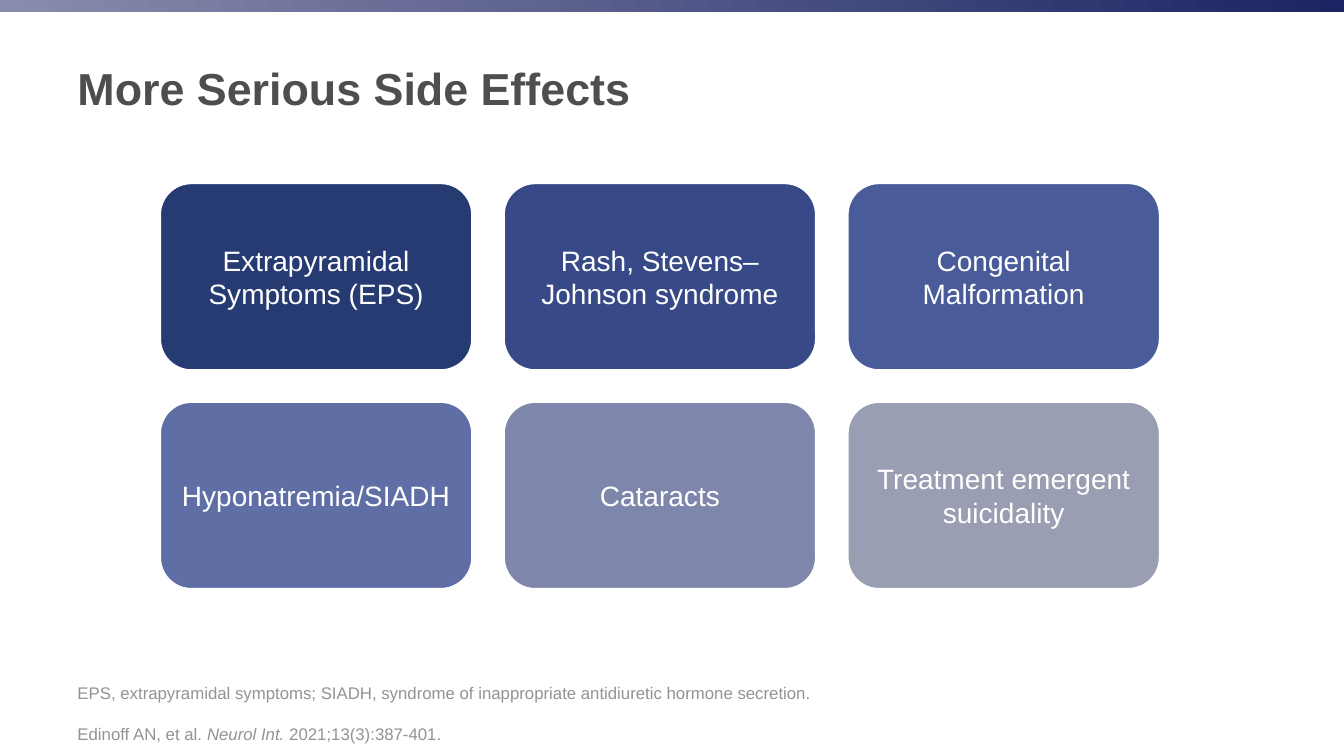
"""Build the slide on more serious side effects."""
from pptx import Presentation
from pptx.dml.color import RGBColor
from pptx.enum.shapes import MSO_SHAPE
from pptx.enum.text import MSO_ANCHOR, PP_ALIGN
from pptx.util import Inches, Pt

RECTANGLE, ROUNDED = MSO_SHAPE.RECTANGLE, MSO_SHAPE.ROUNDED_RECTANGLE
MIDDLE, BOTTOM = MSO_ANCHOR.MIDDLE, MSO_ANCHOR.BOTTOM
LEFT, CENTER = PP_ALIGN.LEFT, PP_ALIGN.CENTER

WHITE = RGBColor(0xFF, 0xFF, 0xFF)
TITLE_GRAY = RGBColor(0x4D, 0x4E, 0x4D)
NOTE_GRAY = RGBColor(0x93, 0x93, 0x93)
BAND_START = RGBColor(0x89, 0x8C, 0xAD)
BAND_END = RGBColor(0x1C, 0x24, 0x63)
FONT = "Arial"

TITLE = "More Serious Side Effects"
SIDE_EFFECTS = [
    ("Extrapyramidal Symptoms (EPS)", RGBColor(0x27, 0x3B, 0x73)),
    ("Rash, Stevens–Johnson syndrome", RGBColor(0x37, 0x4A, 0x87)),
    ("Congenital Malformation", RGBColor(0x49, 0x5B, 0x99)),
    ("Hyponatremia/SIADH", RGBColor(0x60, 0x6E, 0xA6)),
    ("Cataracts", RGBColor(0x7E, 0x87, 0xAB)),
    ("Treatment emergent suicidality", RGBColor(0x9A, 0x9E, 0xB3)),
]
ABBREVIATIONS = ("EPS, extrapyramidal symptoms; SIADH, syndrome of "
                 "inappropriate antidiuretic hormone secretion.")
CITATION = [("Edinoff AN, et al. ", False), ("Neurol Int. ", True),
            ("2021;13(3):387-401.", False)]

COLUMNS = 3
GRID_LEFT, GRID_TOP = 1.59, 1.82
CARD_WIDTH, CARD_HEIGHT = 3.09, 1.85
GAP = 0.32
CARD_INSET = 0.08


def style_text(shape, size, color, anchor, align=LEFT, bold=False):
    frame = shape.text_frame
    frame.word_wrap = True
    frame.vertical_anchor = anchor
    for paragraph in frame.paragraphs:
        paragraph.alignment = align
        for run in paragraph.runs:
            run.font.name = FONT
            run.font.size = Pt(size)
            run.font.bold = bold
            run.font.color.rgb = color


def add_band(slide):
    band = slide.shapes.add_shape(RECTANGLE, 0, 0, Inches(13.33), Inches(0.12))
    band.shadow.inherit = False
    band.line.fill.background()
    band.fill.gradient()
    band.fill.gradient_angle = 0
    for stop, color, position in zip(band.fill.gradient_stops,
                                     (BAND_START, BAND_END), (0, 1)):
        stop.color.rgb = color
        stop.position = position


def add_title(slide):
    title = slide.shapes.add_textbox(Inches(0.67), Inches(0.22),
                                     Inches(11.75), Inches(1.3))
    title.text_frame.text = TITLE
    style_text(title, 32, TITLE_GRAY, MIDDLE, bold=True)


def add_card(slide, index, label, color):
    row, column = divmod(index, COLUMNS)
    card = slide.shapes.add_shape(
        ROUNDED,
        Inches(GRID_LEFT + column * (CARD_WIDTH + GAP)),
        Inches(GRID_TOP + row * (CARD_HEIGHT + GAP)),
        Inches(CARD_WIDTH), Inches(CARD_HEIGHT))
    card.shadow.inherit = False
    card.fill.solid()
    card.fill.fore_color.rgb = color
    card.line.color.rgb = WHITE
    card.line.width = Pt(1)
    frame = card.text_frame
    frame.margin_left = frame.margin_right = Inches(CARD_INSET)
    frame.margin_top = frame.margin_bottom = Inches(CARD_INSET)
    frame.text = label
    style_text(card, 20, WHITE, MIDDLE, CENTER)


def add_footnotes(slide):
    footnotes = slide.shapes.add_textbox(Inches(0.67), Inches(6.95),
                                         Inches(11.75), Inches(0.48))
    footnotes.text_frame.text = ABBREVIATIONS
    citation = footnotes.text_frame.add_paragraph()
    citation.space_before = Pt(14.8)
    for text, italic in CITATION:
        run = citation.add_run()
        run.text = text
        run.font.italic = italic
    style_text(footnotes, 12, NOTE_GRAY, BOTTOM)


def main():
    presentation = Presentation()
    presentation.slide_width = Inches(13.33)
    presentation.slide_height = Inches(7.5)
    slide = presentation.slides.add_slide(presentation.slide_layouts[6])
    add_band(slide)
    add_title(slide)
    add_footnotes(slide)
    for index, (label, color) in enumerate(SIDE_EFFECTS):
        add_card(slide, index, label, color)
    presentation.save("out.pptx")


if __name__ == "__main__":
    main()
